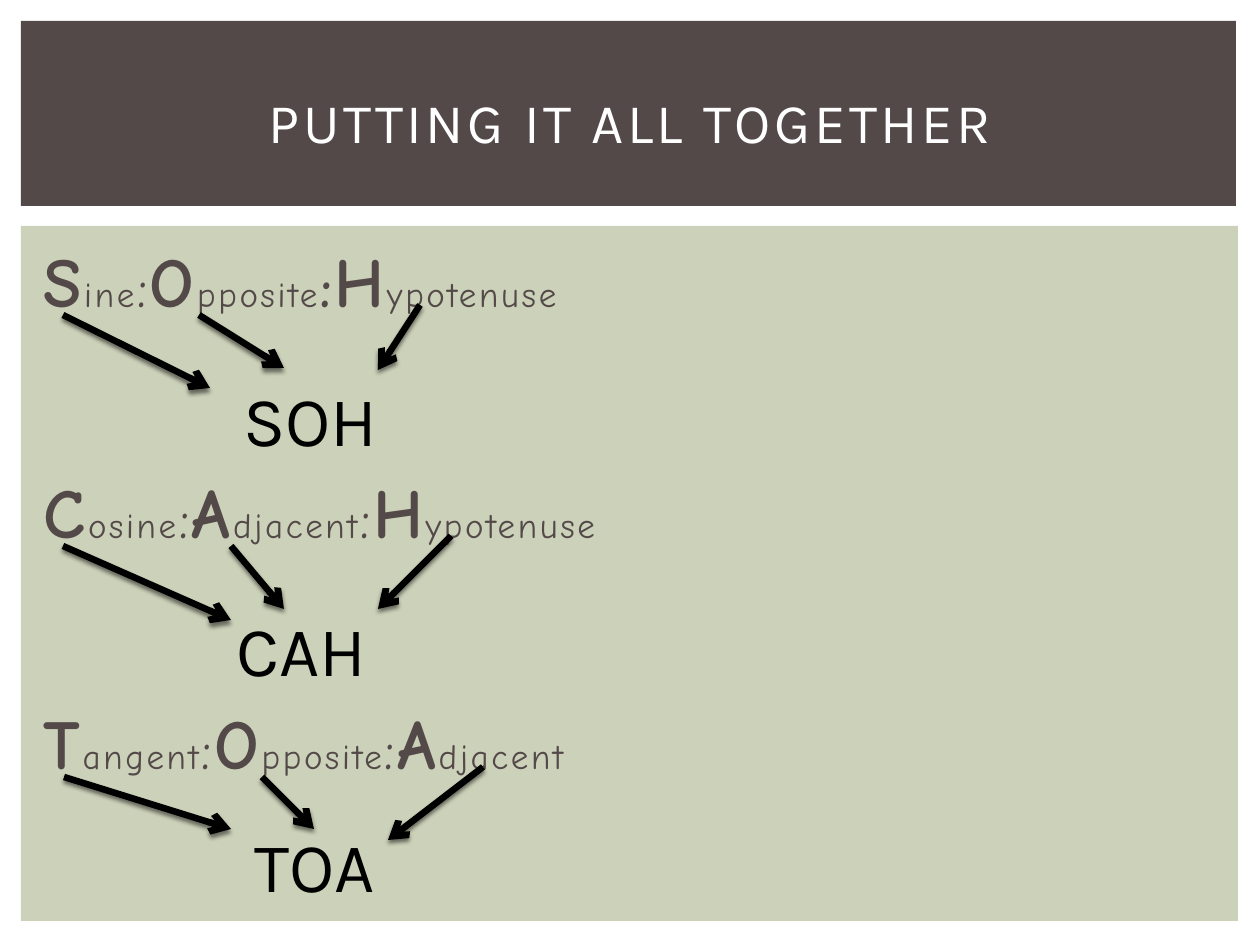
from lxml.etree import SubElement
from pptx import Presentation
from pptx.dml.color import RGBColor
from pptx.enum.shapes import MSO_CONNECTOR as Connector, MSO_SHAPE as Shape
from pptx.enum.text import MSO_ANCHOR as Anchor, PP_ALIGN as Align
from pptx.oxml.ns import qn
from pptx.util import Pt

PX = 914400 // 126
BROWN, GREEN, WHITE, BLACK = "534949", "CCD1B9", "FFFFFF", "000000"
HAND, SANS = "Comic Neue", "Karla"

TITLE = "PUTTING IT ALL TOGETHER"
PANELS = [((21, 226, 1217, 695), GREEN), ((21, 21, 1215, 185), BROWN)]
# Each ratio: its words, then whether each colon between them is bold
RATIOS = [
    (("Sine", "Opposite", "Hypotenuse"), (False, True)),
    (("Cosine", "Adjacent", "Hypotenuse"), (False, False)),
    (("Tangent", "Opposite", "Adjacent"), (False, False)),
]
# Each acronym: left, top
ACRONYMS = [("SOH", 231, 370), ("CAH", 224, 600), ("TOA", 242, 816)]
# Arrows from each initial to its acronym: x1, y1, x2, y2
ARROWS = [
    (63, 315, 210, 388), (63, 546, 231, 620), (64, 777, 231, 829),
    (199, 315, 284, 368), (420, 305, 378, 370), (231, 546, 284, 609),
    (262, 777, 314, 829), (451, 536, 378, 609), (483, 767, 388, 840),
]
# Points: fixed line height, and gap that spaces the ratios evenly
LINE_HEIGHT, RATIO_PITCH = 48, 132


def color(value):
    return RGBColor.from_string(value)


def emu(*lengths):
    return [length * PX for length in lengths]


def add_run(paragraph, text, size, font, fill, bold=False, spacing=0):
    run = paragraph.add_run()
    run.text = text
    run.font.size, run.font.name, run.font.bold = Pt(size), font, bold
    run.font.color.rgb = color(fill)
    if spacing:
        run.font._element.set("spc", str(round(spacing * 100)))


def add_text_frame(slide, box):
    frame = slide.shapes.add_textbox(*emu(*box)).text_frame
    frame.word_wrap = True
    return frame


def add_arrow(slide, points):
    arrow = slide.shapes.add_connector(Connector.STRAIGHT, *emu(*points))
    arrow.line.color.rgb = color(BLACK)
    arrow.line.width = Pt(3.75)
    SubElement(arrow.line._get_or_add_ln(), qn("a:tailEnd"), type="arrow")
    effects = SubElement(arrow._element.spPr, qn("a:effectLst"))
    shadow = SubElement(effects, qn("a:outerShdw"), blurRad=str(Pt(2.5)),
                        dist=str(Pt(2)), dir="5400000", rotWithShape="0")
    shade = SubElement(shadow, qn("a:srgbClr"), val=BLACK)
    SubElement(shade, qn("a:alpha"), val="50000")


def main():
    presentation = Presentation()
    presentation.slide_width, presentation.slide_height = emu(1260, 945)
    slide = presentation.slides.add_slide(presentation.slide_layouts[6])

    # Background panels
    for box, fill in PANELS:
        panel = slide.shapes.add_shape(Shape.RECTANGLE, *emu(*box))
        panel.shadow.inherit = False
        panel.fill.solid()
        panel.fill.fore_color.rgb = color(fill)
        panel.line.fill.background()

    # Ratios with large initials
    body = add_text_frame(slide, (31, 231, 1207, 683))
    for index, (words, bold_colons) in enumerate(RATIOS):
        paragraph = body.add_paragraph() if index else body.paragraphs[0]
        paragraph.line_spacing = Pt(LINE_HEIGHT)
        paragraph.space_before = Pt(RATIO_PITCH - LINE_HEIGHT if index else 2)
        for position, word in enumerate(words):
            if position:
                add_run(paragraph, ":", 32, HAND, BROWN,
                        bold_colons[position - 1], 1.5)
            add_run(paragraph, word[0], 40, HAND, BROWN, True, 1.5)
            add_run(paragraph, word[1:], 20, HAND, BROWN, False, 1.5)

    # Title
    title = add_text_frame(slide, (53, 49, 1155, 145))
    title.vertical_anchor = Anchor.MIDDLE
    title.paragraphs[0].alignment = Align.CENTER
    add_run(title.paragraphs[0], TITLE, 32, SANS, WHITE, spacing=2)

    # Arrows and acronyms
    for points in ARROWS:
        add_arrow(slide, points)
    for acronym, left, top in ACRONYMS:
        label = add_text_frame(slide, (left, top, 165, 97))
        add_run(label.paragraphs[0], acronym, 40, SANS, BLACK)

    presentation.save("out.pptx")


if __name__ == "__main__":
    main()
